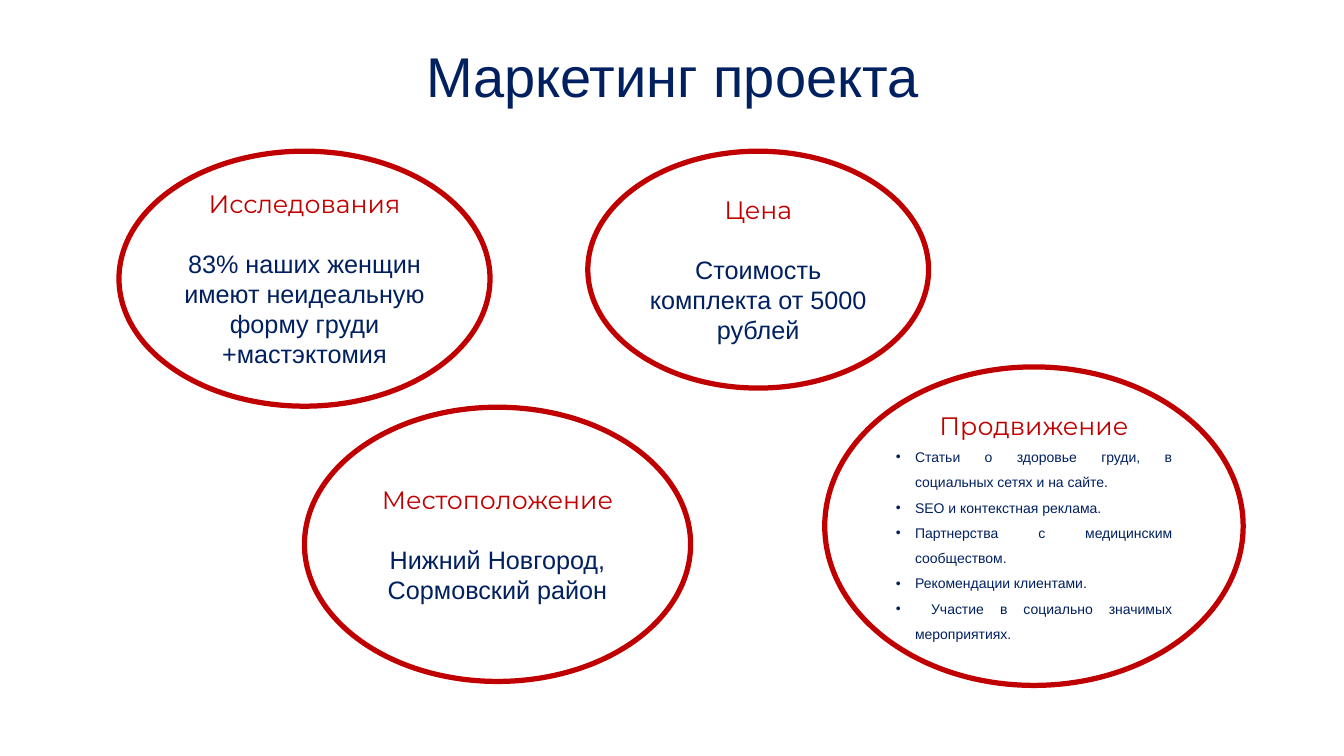
from lxml import etree
from pptx import Presentation
from pptx import util as u
from pptx.dml.color import RGBColor
from pptx.enum import shapes, text
from pptx.oxml import ns

WHITE = RGBColor(0xFF, 0xFF, 0xFF)
RED = RGBColor(0xC0, 0x00, 0x00)
NAVY = RGBColor(0x00, 0x20, 0x60)

BUBBLES = [
    ((3.02, 4.04, 3.83, 2.72), "Местоположение",
     ["Нижний Новгород,", "Сормовский район"], False),
    ((1.18, 1.5, 3.68, 2.53), "Исследования",
     ["83% наших женщин имеют неидеальную форму груди +мастэктомия"], False),
    ((8.18, 3.64, 4.15, 3.16), "Продвижение",
     ["Статьи о здоровье груди, в социальных сетях и на сайте.",
      "SEO и контекстная реклама.",
      "Партнерства с медицинским сообществом.",
      "Рекомендации клиентами.",
      " Участие в социально значимых мероприятиях."], True),
    ((5.83, 1.5, 3.38, 2.35), "Цена",
     ["Стоимость комплекта от 5000 рублей"], False),
]


def add_run(paragraph, words, size, color, font="Arial"):
    """Add one formatted run to a paragraph."""
    run = paragraph.add_run()
    run.text = words
    run.font.size = u.Pt(size)
    run.font.name = font
    run.font.color.rgb = color


def make_bullet(paragraph):
    """Turn a paragraph into a justified bullet with a hanging indent."""
    paragraph.alignment = text.PP_ALIGN.JUSTIFY
    paragraph.line_spacing = 1.5
    properties = paragraph._p.get_or_add_pPr()
    properties.set("marL", str(u.Inches(0.19)))
    properties.set("indent", str(-u.Inches(0.19)))
    etree.SubElement(properties, ns.qn("a:buFont"), typeface="Arial")
    etree.SubElement(properties, ns.qn("a:buChar"), char="•")


def add_title(slide, box, words):
    """Place and format the title placeholder."""
    title = slide.shapes.title
    title.left, title.top, title.width, title.height = map(u.Inches, box)
    frame = title.text_frame
    frame.vertical_anchor = text.MSO_ANCHOR.MIDDLE
    paragraph = frame.paragraphs[0]
    paragraph.alignment = text.PP_ALIGN.CENTER
    paragraph.line_spacing = 0.9
    add_run(paragraph, words, 40, NAVY)


def add_bubble(slide, box, heading, lines, bulleted):
    """Draw an outlined ellipse with a heading and its text."""
    bubble = slide.shapes.add_shape(shapes.MSO_SHAPE.OVAL, *map(u.Inches, box))
    bubble.shadow.inherit = False
    bubble.fill.solid()
    bubble.fill.fore_color.rgb = WHITE
    bubble.line.color.rgb = RED
    bubble.line.width = u.Pt(3.75)
    frame = bubble.text_frame
    frame.word_wrap = True
    frame.vertical_anchor = text.MSO_ANCHOR.MIDDLE
    paragraph = frame.paragraphs[0]
    paragraph.alignment = text.PP_ALIGN.CENTER
    add_run(paragraph, heading, 18, RED, "Montserrat")
    for index, line in enumerate(lines):
        paragraph = frame.add_paragraph()
        if bulleted:
            make_bullet(paragraph)
        else:
            paragraph.alignment = text.PP_ALIGN.CENTER
            if index == 0:
                paragraph.space_before = u.Pt(21)
        add_run(paragraph, line, 10 if bulleted else 18, NAVY)


def main():
    """Build the marketing slide and save it."""
    presentation = Presentation()
    presentation.slide_width = u.Inches(13.33)
    presentation.slide_height = u.Inches(7.5)
    slide = presentation.slides.add_slide(presentation.slide_layouts[5])
    add_title(slide, (0.92, 0.17, 11.5, 1.24), "Маркетинг проекта")
    for bubble in BUBBLES:
        add_bubble(slide, *bubble)
    presentation.save("out.pptx")


if __name__ == "__main__":
    main()
